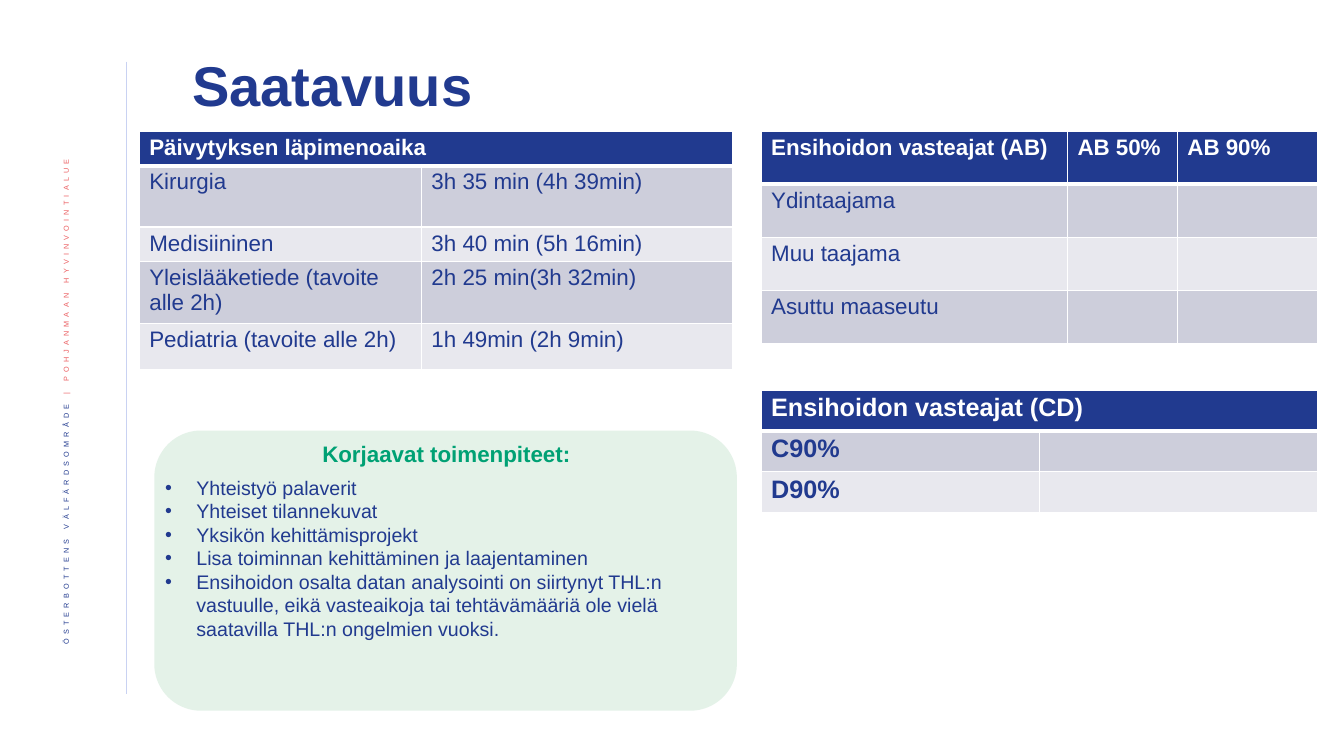
from dataclasses import dataclass

from lxml import etree
from pptx import Presentation
from pptx.dml.color import RGBColor
from pptx.enum.shapes import MSO_CONNECTOR, MSO_SHAPE
from pptx.enum.text import MSO_ANCHOR, PP_ALIGN
from pptx.oxml.ns import qn
from pptx.util import Cm, Pt

STRAIGHT = MSO_CONNECTOR.STRAIGHT
ROUNDED = MSO_SHAPE.ROUNDED_RECTANGLE
TOP, MIDDLE = MSO_ANCHOR.TOP, MSO_ANCHOR.MIDDLE
LEFT, CENTER, RIGHT = PP_ALIGN.LEFT, PP_ALIGN.CENTER, PP_ALIGN.RIGHT


@dataclass(frozen=True)
class Theme:
    font: str = "Arial"
    navy: str = "213A8F"
    coral: str = "EB5C5F"
    green: str = "00A174"
    mint: str = "85C598"
    rule: str = "C9D2F2"
    white: str = "FFFFFF"
    bands: tuple = ("CDCEDB", "E8E8EE")
    title: int = 40
    heading: int = 18
    table: int = 16
    body: int = 14
    side: int = 9


class SlideBuilder:
    def __init__(self, slide, theme):
        self.shapes = slide.shapes
        self.theme = theme

    def run(self, paragraph, text, size, color, bold=False):
        run = paragraph.add_run()
        run.text = text
        font = run.font
        font.name, font.size, font.bold = self.theme.font, Pt(size), bold
        font.color.rgb = RGBColor.from_string(color)
        return run

    def text_box(self, box, anchor=TOP):
        frame = self.shapes.add_textbox(*map(Cm, box)).text_frame
        frame.word_wrap = True
        frame.vertical_anchor = anchor
        return frame

    def bullet(self, paragraph, indent):
        properties = paragraph._p.get_or_add_pPr()
        properties.set("marL", str(Cm(indent)))
        properties.set("indent", str(-Cm(indent)))
        etree.SubElement(properties, qn("a:buFont"), typeface=self.theme.font)
        etree.SubElement(properties, qn("a:buChar"), char="•")

    def rule(self, x, top, bottom):
        line = self.shapes.add_connector(STRAIGHT, Cm(x), Cm(top), Cm(x), Cm(bottom))
        line.line.color.rgb = RGBColor.from_string(self.theme.rule)
        line.line.width = Pt(0.5)
        etree.SubElement(line._element.spPr, qn("a:effectLst"))

    def card(self, box, color, opacity):
        card = self.shapes.add_shape(ROUNDED, *map(Cm, box))
        card.shadow.inherit = False
        card.fill.solid()
        card.fill.fore_color.rgb = RGBColor.from_string(color)
        card.line.fill.background()
        tint = card._element.spPr.find(".//" + qn("a:srgbClr"))
        etree.SubElement(tint, qn("a:alpha"), val=str(opacity * 1000))

    def borders(self, cell, widths):
        properties = cell._tc.get_or_add_tcPr()
        for side, width in zip("LRTB", widths):
            line = etree.SubElement(properties, qn("a:ln" + side), w=str(Pt(width)))
            fill = etree.SubElement(line, qn("a:solidFill"))
            etree.SubElement(fill, qn("a:srgbClr"), val=self.theme.white)

    def table(self, left, top, widths, heights, rows, size, bold_body=False):
        """The first row is the header; a single header entry spans all columns."""
        theme = self.theme
        table = self.shapes.add_table(
            len(rows), len(widths), Cm(left), Cm(top),
            Cm(sum(widths)), Cm(sum(heights))).table
        for column, width in zip(table.columns, widths):
            column.width = Cm(width)
        for row, height in zip(table.rows, heights):
            row.height = Cm(height)
        for r, texts in enumerate(rows):
            header = r == 0
            fill = theme.navy if header else theme.bands[(r - 1) % 2]
            for c in range(len(widths)):
                cell = table.cell(r, c)
                cell.margin_top = cell.margin_bottom = Cm(0.1)
                self.borders(cell, (1, 1, 3 if r == 1 else 1, 3 if header else 1))
                cell.fill.solid()
                cell.fill.fore_color.rgb = RGBColor.from_string(fill)
                if c < len(texts):
                    self.run(cell.text_frame.paragraphs[0], texts[c], size,
                             theme.white if header else theme.navy,
                             header or bold_body)
        if len(rows[0]) == 1:
            table.cell(0, 0).merge(table.cell(0, len(widths) - 1))


def main():
    presentation = Presentation()
    presentation.slide_width, presentation.slide_height = Cm(33.87), Cm(19.05)
    slide = presentation.slides.add_slide(presentation.slide_layouts[6])
    theme = Theme()
    page = SlideBuilder(slide, theme)

    # Side strip with the organisation in two languages
    page.rule(3.18, 1.55, 17.48)
    strip = page.text_box((1.07, 3.61, 1.32, 14.55), MIDDLE)
    strip._txBody.bodyPr.set("vert", "vert270")
    organisation = strip.paragraphs[0]
    organisation.alignment = RIGHT
    organisation.line_spacing = 0.9
    for name, color in (("ÖSTERBOTTENS VÄLFÄRDSOMRÅDE ", theme.navy),
                        ("| POHJANMAAN HYVINVOINTIALUE ", theme.coral)):
        properties = page.run(organisation, name, theme.side, color).font._element
        properties.set("baseline", "30000")
        properties.set("spc", "300")

    # Title
    title = page.text_box((4.6, 1.14, 27.89, 2.16), MIDDLE).paragraphs[0]
    title.alignment = LEFT
    title.line_spacing = 0.9
    page.run(title, "Saatavuus", theme.title, theme.navy, True)

    # Emergency department throughput times
    page.table(3.51, 3.3, (7.11, 7.85), (0.84, 1.54, 0.88, 1.49, 1.16), (
        ("Päivytyksen läpimenoaika",),
        ("Kirurgia", "3h 35 min (4h 39min)"),
        ("Medisiininen", "3h 40 min (5h 16min)"),
        ("Yleislääketiede (tavoite alle 2h)", "2h 25 min(3h 32min)"),
        ("Pediatria (tavoite alle 2h)", "1h 49min (2h 9min)"),
    ), theme.table)

    # Response times, urgency classes A and B
    response_left = 19.18
    page.table(response_left, 3.3, (7.72, 2.77, 3.53), (1.34,) * 4, (
        ("Ensihoidon vasteajat (AB)", "AB 50%", "AB 90%"),
        ("Ydintaajama",),
        ("Muu taajama",),
        ("Asuttu maaseutu",),
    ), theme.table)

    # Corrective actions
    page.card((3.89, 10.85, 14.68, 7.06), theme.mint, 22)
    actions = page.text_box((3.91, 10.97, 14.68, 5.33))
    heading = actions.paragraphs[0]
    heading.alignment = CENTER
    heading.space_after = Pt(6)
    page.run(heading, "Korjaavat toimenpiteet:", theme.table, theme.green, True)
    for action in (
        "Yhteistyö palaverit",
        "Yhteiset tilannekuvat",
        "Yksikön kehittämisprojekt",
        "Lisa toiminnan kehittäminen ja laajentaminen",
        "Ensihoidon osalta datan analysointi on siirtynyt THL:n vastuulle, "
        "eikä vasteaikoja tai tehtävämääriä ole vielä saatavilla "
        "THL:n ongelmien vuoksi.",
    ):
        item = actions.add_paragraph()
        page.bullet(item, 0.79)
        page.run(item, action, theme.body, theme.navy)

    # Response times, urgency classes C and D
    page.table(response_left, 9.83, (7.01,) * 2, (1.03,) * 3, (
        ("Ensihoidon vasteajat (CD)",),
        ("C90%",),
        ("D90%",),
    ), theme.heading, bold_body=True)

    presentation.save("out.pptx")


if __name__ == "__main__":
    main()
